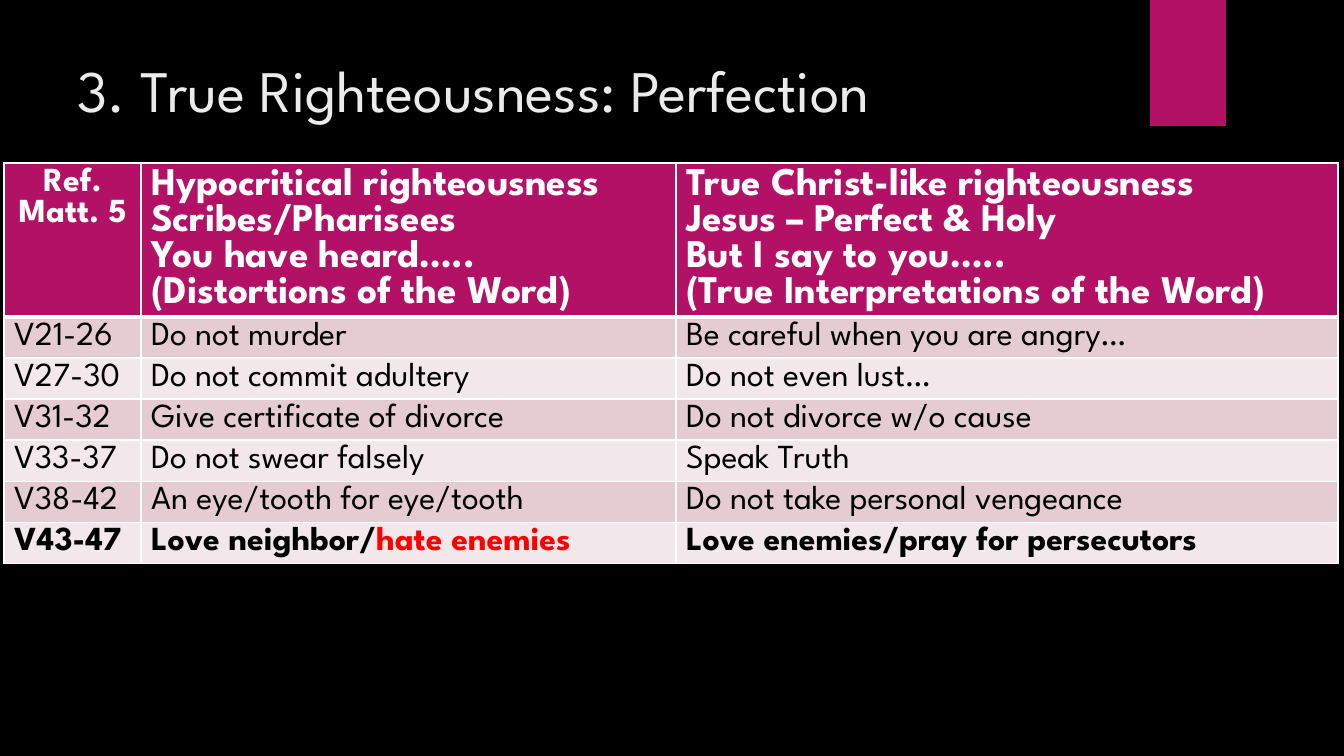
from lxml import etree
from pptx import Presentation
from pptx.dml.color import RGBColor
from pptx.enum.shapes import MSO_SHAPE
from pptx.enum.text import MSO_ANCHOR, MSO_AUTO_SIZE, PP_ALIGN
from pptx.oxml.ns import qn
from pptx.util import Emu, Pt

TITLE = "3. True Righteousness: Perfection"
HEADINGS = [
    ["Ref.", "Matt. 5"],
    ["Hypocritical righteousness", "Scribes/Pharisees", "You have heard…..",
     "(Distortions of the Word)"],
    ["True Christ-like righteousness", "Jesus – Perfect & Holy",
     "But I say to you…..", "(True Interpretations of the Word)"],
]
VERSES = [
    ("V21-26", "Do not murder", "Be careful when you are angry…"),
    ("V27-30", "Do not commit adultery", "Do not even lust…"),
    ("V31-32", "Give certificate of divorce", "Do not divorce w/o cause"),
    ("V33-37", "Do not swear falsely", "Speak Truth"),
    ("V38-42", "An eye/tooth for eye/tooth", "Do not take personal vengeance"),
    ("V43-47", "Love neighbor/", "Love enemies/pray for persecutors"),
]
DISTORTION = "hate enemies"

FONT = "League Spartan"
BLACK = RGBColor(0x00, 0x00, 0x00)
WHITE = RGBColor(0xFF, 0xFF, 0xFF)
OFF_WHITE = RGBColor(0xEB, 0xEB, 0xEB)
MAGENTA = RGBColor(0xB3, 0x11, 0x66)
ROSE = RGBColor(0xE5, 0xCC, 0xD3)
PALE_ROSE = RGBColor(0xF2, 0xE7, 0xEA)
RED = RGBColor(0xFF, 0x00, 0x00)
LEFT, CENTER = PP_ALIGN.LEFT, PP_ALIGN.CENTER
TOP = MSO_ANCHOR.TOP
NO_AUTOFIT = MSO_AUTO_SIZE.NONE
RECTANGLE = MSO_SHAPE.RECTANGLE

SLIDE_SIZE = (1344, 756)
TITLE_BOX = (67, 29, 1037, 154)
TITLE_INSET = 25
TAB_BOX = (1150, 0, 76, 126)
TABLE_LEFT, TABLE_TOP = 4, 163
COLUMN_WIDTHS = [137, 535, 662]
HEADING_HEIGHT, VERSE_HEIGHT = 154, 41


def px(length):
    """Turn pixels into EMU."""
    return Emu(round(length * 914400 / 100.8))


def style(paragraph, size, color, bold=False, align=LEFT):
    """Set the font and alignment of a paragraph."""
    paragraph.alignment = align
    font = paragraph.font
    font.name, font.size, font.bold = FONT, Pt(size), bold
    font.color.rgb = color


def fill_cell(cell, lines, fill, size, color, bold, align, top, bottom):
    """Write lines into a cell with its fill and white borders."""
    cell.text = "\n".join(lines)
    for paragraph in cell.text_frame.paragraphs:
        style(paragraph, size, color, bold, align)
    properties = cell._tc.get_or_add_tcPr()
    for side, width in (("L", 1), ("R", 1), ("T", top), ("B", bottom)):
        border = etree.SubElement(properties, qn(f"a:ln{side}"), w=str(Pt(width)))
        solid = etree.SubElement(border, qn("a:solidFill"))
        etree.SubElement(solid, qn("a:srgbClr"), val=str(WHITE))
    cell.fill.solid()
    cell.fill.fore_color.rgb = fill


def add_title(slide):
    """Place and format the title."""
    title = slide.shapes.title
    title.left, title.top, title.width, title.height = map(px, TITLE_BOX)
    frame = title.text_frame
    frame.text = TITLE
    frame.word_wrap = True
    frame.auto_size = NO_AUTOFIT
    frame.vertical_anchor = TOP
    frame.margin_top = px(TITLE_INSET)
    style(frame.paragraphs[0], 42, OFF_WHITE)


def add_tab(slide):
    """Draw the magenta tab at the top edge."""
    tab = slide.shapes.add_shape(RECTANGLE, *map(px, TAB_BOX))
    tab.shadow.inherit = False
    tab.fill.solid()
    tab.fill.fore_color.rgb = MAGENTA
    tab.line.fill.background()


def add_comparison(slide):
    """Build the table of verses."""
    heights = [HEADING_HEIGHT] + [VERSE_HEIGHT] * len(VERSES)
    table = slide.shapes.add_table(
        len(heights), len(COLUMN_WIDTHS), px(TABLE_LEFT), px(TABLE_TOP),
        px(sum(COLUMN_WIDTHS)), px(sum(heights))).table
    for column, width in zip(table.columns, COLUMN_WIDTHS):
        column.width = px(width)
    for row, height in zip(table.rows, heights):
        row.height = px(height)

    for col, lines in enumerate(HEADINGS):
        size, align = (28, LEFT) if col else (24, CENTER)
        fill_cell(table.cell(0, col), lines, MAGENTA, size, WHITE, True, align, 1, 3)
    for row, verse in enumerate(VERSES, 1):
        fill = ROSE if row % 2 else PALE_ROSE
        bold = row == len(VERSES)
        top = 3 if row == 1 else 1
        for col, text in enumerate(verse):
            fill_cell(table.cell(row, col), [text], fill, 24, BLACK, bold, LEFT, top, 1)

    distortion = table.cell(len(VERSES), 1).text_frame.paragraphs[0].add_run()
    distortion.text = DISTORTION
    distortion.font.color.rgb = RED


def main():
    """Build and save the slide."""
    deck = Presentation()
    deck.slide_width, deck.slide_height = map(px, SLIDE_SIZE)
    slide = deck.slides.add_slide(deck.slide_layouts[5])
    slide.background.fill.solid()
    slide.background.fill.fore_color.rgb = BLACK
    add_tab(slide)
    add_title(slide)
    add_comparison(slide)
    deck.save("out.pptx")


if __name__ == "__main__":
    main()
